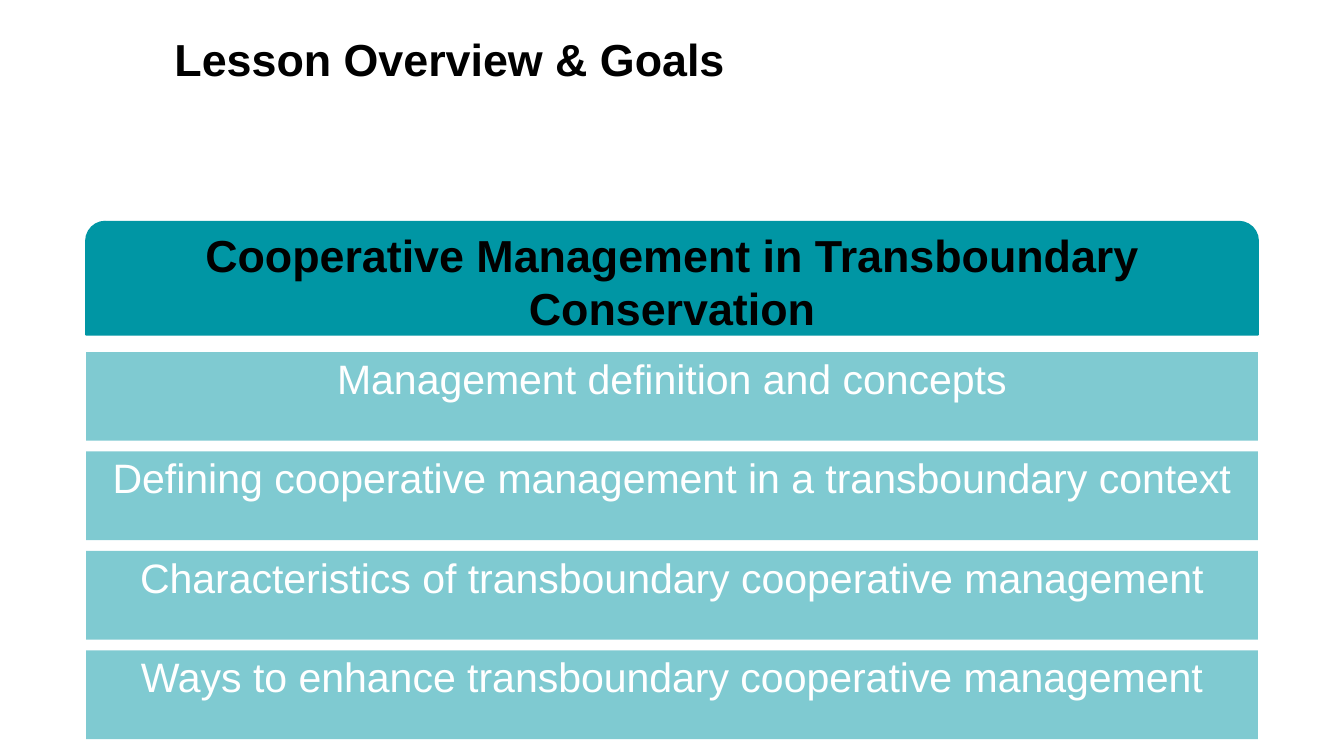
"""Build the lesson overview slide with its heading band and four topic bars."""
import pptx
import pptx.dml.color
import pptx.enum.shapes
import pptx.enum.text
import pptx.oxml
import pptx.oxml.ns
import pptx.util
from pptx.util import Inches

TEAL = pptx.dml.color.RGBColor(0x00, 0x96, 0xA4)
WHITE = pptx.dml.color.RGBColor(0xFF, 0xFF, 0xFF)
BLACK = pptx.dml.color.RGBColor(0x00, 0x00, 0x00)
SHAPES = pptx.enum.shapes.MSO_SHAPE
ALIGN = pptx.enum.text.PP_ALIGN
ANCHOR = pptx.enum.text.MSO_ANCHOR

PAGE_WIDTH = Inches(10)
LEFT, WIDTH = 0.64, 8.72
TOPIC_TOP, TOPIC_HEIGHT, TOPIC_STEP = 2.62, 0.66, 0.74
TOPICS = (
    "Management definition and concepts",
    "Defining cooperative management in a transboundary context",
    "Characteristics of transboundary cooperative management",
    "Ways to enhance transboundary cooperative management",
)


def write_text(box, text, *, size, color, bold=False, align=ALIGN.CENTER,
               anchor=ANCHOR.TOP, spacing=1.0, margin=0.05):
    frame = box.text_frame
    frame.word_wrap = True
    frame.vertical_anchor = anchor
    frame.margin_left = frame.margin_right = Inches(0.1)
    frame.margin_top = frame.margin_bottom = Inches(margin)
    para = frame.paragraphs[0]
    para.alignment = align
    para.line_spacing = spacing
    span = para.add_run()
    span.text = text
    span.font.name = "Arial"
    span.font.size = pptx.util.Pt(size)
    span.font.bold = bold
    span.font.color.rgb = color


class LessonSlide:
    def __init__(self, page):
        self.page = page

    def title(self, text):
        box = self.page.shapes.add_textbox(
            Inches(1.2), Inches(0.19), Inches(8.8), Inches(0.5))
        write_text(box, text, size=24, color=BLACK, bold=True, align=ALIGN.LEFT)

    def bar(self, kind, top, height):
        box = self.page.shapes.add_shape(
            kind, Inches(LEFT), Inches(top), Inches(WIDTH), Inches(height))
        box.shadow.inherit = False
        box.fill.solid()
        box.fill.fore_color.rgb = TEAL
        return box

    def heading(self, text):
        box = self.bar(SHAPES.ROUND_2_SAME_RECTANGLE, 1.65, 0.84)
        box.adjustments[0] = 0.17
        box.line.color.rgb = TEAL
        box.line.width = pptx.util.Pt(1)
        write_text(box, text, size=24, color=BLACK, bold=True,
                   anchor=ANCHOR.MIDDLE, margin=0.1)

    def topic(self, text, top):
        box = self.bar(SHAPES.RECTANGLE, top, TOPIC_HEIGHT)
        box.line.fill.background()
        color = box.fill._xPr.find(pptx.oxml.ns.qn("a:solidFill"))[0]
        color.append(pptx.oxml.parse_xml(
            f'<a:alpha {pptx.oxml.ns.nsdecls("a")} val="50000"/>'))
        write_text(box, text, size=22, color=WHITE, spacing=0.9)


def main():
    deck = pptx.Presentation()
    deck.slide_width = PAGE_WIDTH
    deck.slide_height = PAGE_WIDTH * 9 // 16
    lesson = LessonSlide(deck.slides.add_slide(deck.slide_layouts[6]))
    lesson.heading("Cooperative Management in Transboundary Conservation")
    for index, text in enumerate(TOPICS):
        lesson.topic(text, TOPIC_TOP + index * TOPIC_STEP)
    lesson.title("Lesson Overview & Goals")
    deck.save("out.pptx")


if __name__ == "__main__":
    main()
